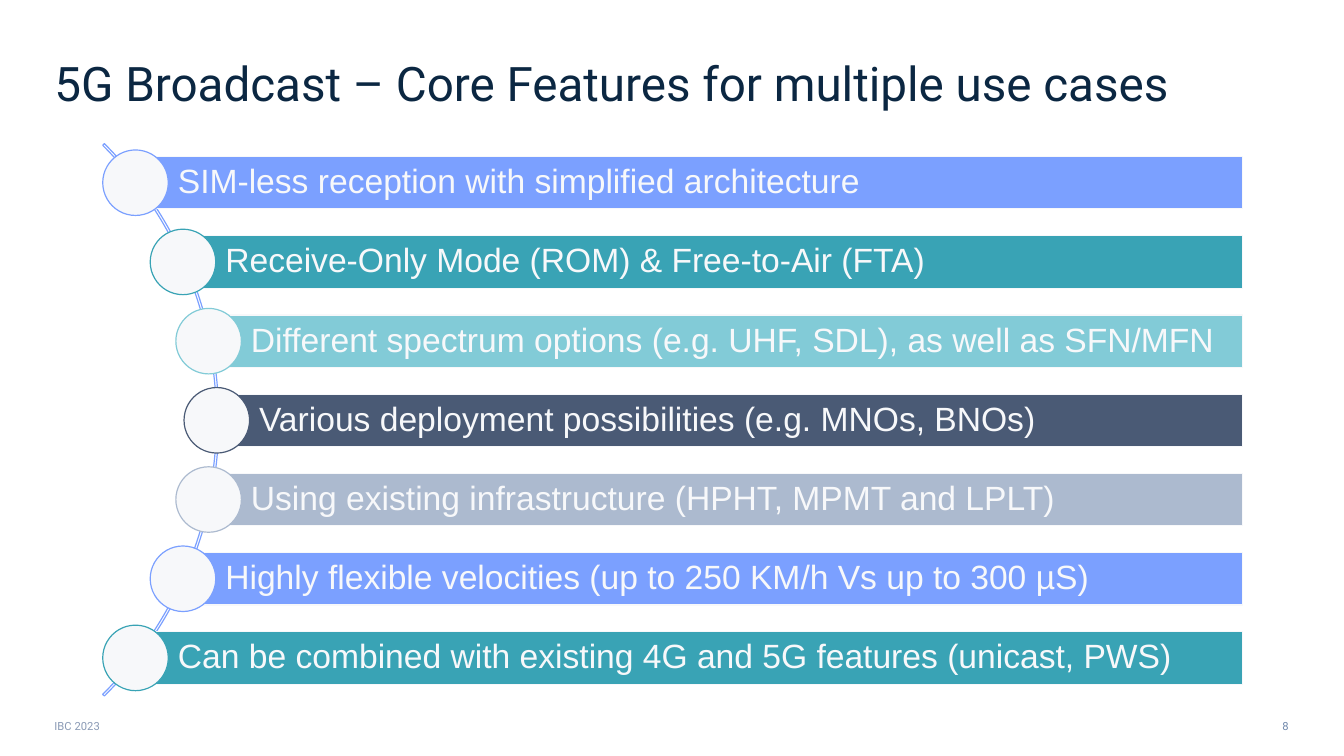
from dataclasses import dataclass
from math import sqrt

from pptx import Presentation
from pptx.dml.color import RGBColor
from pptx.enum.shapes import MSO_SHAPE
from pptx.enum.text import MSO_ANCHOR, PP_ALIGN
from pptx.util import Inches, Pt

TITLE = "5G Broadcast – Core Features for multiple use cases"
FOOTER = "IBC 2023"
PAGE_NUMBER = "8"
FEATURES = [
    "SIM-less reception with simplified architecture",
    "Receive-Only Mode (ROM) & Free-to-Air (FTA)",
    "Different spectrum options (e.g. UHF, SDL), as well as SFN/MFN",
    "Various deployment possibilities (e.g. MNOs, BNOs)",
    "Using existing infrastructure (HPHT, MPMT and LPLT)",
    "Highly flexible velocities (up to 250 KM/h Vs up to 300 µS)",
    "Can be combined with existing 4G and 5G features (unicast, PWS)",
]


@dataclass(frozen=True)
class Theme:
    title: str = "0B2742"
    footer: str = "8A9AB5"
    page: str = "7088AC"
    light: str = "F7F8FA"
    arc: str = "7BA0FF"
    accents: tuple = ("7BA0FF", "39A3B5", "82CBD7", "4A5A75", "ACBACF")
    heading_font: str = "Roboto"
    body_font: str = "Arial"
    title_size: float = 34
    feature_size: float = 24
    small_size: float = 8
    line_width: float = 0.85


THEME = Theme()
LEFT, MIDDLE, RIGHT = PP_ALIGN.LEFT, MSO_ANCHOR.MIDDLE, PP_ALIGN.RIGHT
BOTTOM = MSO_ANCHOR.BOTTOM
RECTANGLE, OVAL, BLOCK_ARC = MSO_SHAPE.RECTANGLE, MSO_SHAPE.OVAL, MSO_SHAPE.BLOCK_ARC

# Inches: the circle centres lie on a curve, one row apart.
CURVE_X, CURVE_Y, CURVE_RADIUS = -1.7, 4.17, 3.85
ARC_LEFT, ARC_TOP, ARC_SIZE = -5.58, 0.29, 7.75
ROW_PITCH = 5.5 / 7
BAR_HEIGHT, BAR_RIGHT = 0.52, 12.32
CIRCLE_SIZE = 0.65


def rgb(color):
    return RGBColor.from_string(color)


def write(frame, text, font, size, color, align=LEFT, spacing=0.9,
          anchor=BOTTOM, insets=(0, 0, 0, 0)):
    """Fill a text frame with one paragraph; insets run left, top, right, bottom."""
    frame.word_wrap = True
    frame.vertical_anchor = anchor
    (frame.margin_left, frame.margin_top,
     frame.margin_right, frame.margin_bottom) = map(Inches, insets)
    frame.text = text
    paragraph = frame.paragraphs[0]
    paragraph.alignment = align
    paragraph.line_spacing = spacing
    paragraph.font.name = font
    paragraph.font.size = Pt(size)
    paragraph.font.color.rgb = rgb(color)


def add_outlined(slide, preset, box, fill, line):
    shape = slide.shapes.add_shape(preset, *map(Inches, box))
    shape.shadow.inherit = False
    if fill:
        shape.fill.solid()
        shape.fill.fore_color.rgb = rgb(fill)
    else:
        shape.fill.background()
    shape.line.color.rgb = rgb(line)
    shape.line.width = Pt(THEME.line_width)
    return shape


def add_title(slide):
    title = slide.shapes.title
    title.left, title.top, title.width, title.height = map(
        Inches, (0.54, 0.62, 12.23, 0.48))
    write(title.text_frame, TITLE, THEME.heading_font, THEME.title_size,
          THEME.title, spacing=0.84)


def add_small_text(slide, box, text, color, **layout):
    label = slide.shapes.add_textbox(*map(Inches, box))
    write(label.text_frame, text, THEME.heading_font, THEME.small_size,
          color, **layout)


def add_arc(slide):
    arc = add_outlined(slide, BLOCK_ARC, (ARC_LEFT, ARC_TOP, ARC_SIZE, ARC_SIZE),
                       None, THEME.arc)
    # Start and end angles (315° and 45°), then the band's thickness.
    for index, value in enumerate((189, 27, 0.003)):
        arc.adjustments[index] = value


def add_feature(slide, row, text):
    offset = (row - (len(FEATURES) - 1) / 2) * ROW_PITCH
    center_x = CURVE_X + sqrt(CURVE_RADIUS ** 2 - offset ** 2)
    center_y = CURVE_Y + offset
    accent = THEME.accents[row % len(THEME.accents)]
    bar = add_outlined(
        slide, RECTANGLE,
        (center_x, center_y - BAR_HEIGHT / 2, BAR_RIGHT - center_x, BAR_HEIGHT),
        accent, THEME.light)
    write(bar.text_frame, text, THEME.body_font, THEME.feature_size, THEME.light,
          anchor=MIDDLE, insets=(0.42, 0.07, 0.07, 0.07))
    add_outlined(
        slide, OVAL,
        (center_x - CIRCLE_SIZE / 2, center_y - CIRCLE_SIZE / 2,
         CIRCLE_SIZE, CIRCLE_SIZE),
        THEME.light, accent)


def main():
    deck = Presentation()
    deck.slide_width, deck.slide_height = Inches(13.33), Inches(7.5)
    slide = deck.slides.add_slide(deck.slide_layouts.get_by_name("Title Only"))
    add_title(slide)
    add_small_text(slide, (12.39, 7.12, 0.41, 0.16), PAGE_NUMBER, THEME.page,
                   align=RIGHT, spacing=1.25, insets=(0.02, 0, 0.02, 0.01))
    add_small_text(slide, (0.54, 7.14, 11.47, 0.13), FOOTER, THEME.footer,
                   spacing=0.96)
    add_arc(slide)
    for row, text in enumerate(FEATURES):
        add_feature(slide, row, text)
    deck.save("out.pptx")


if __name__ == "__main__":
    main()
